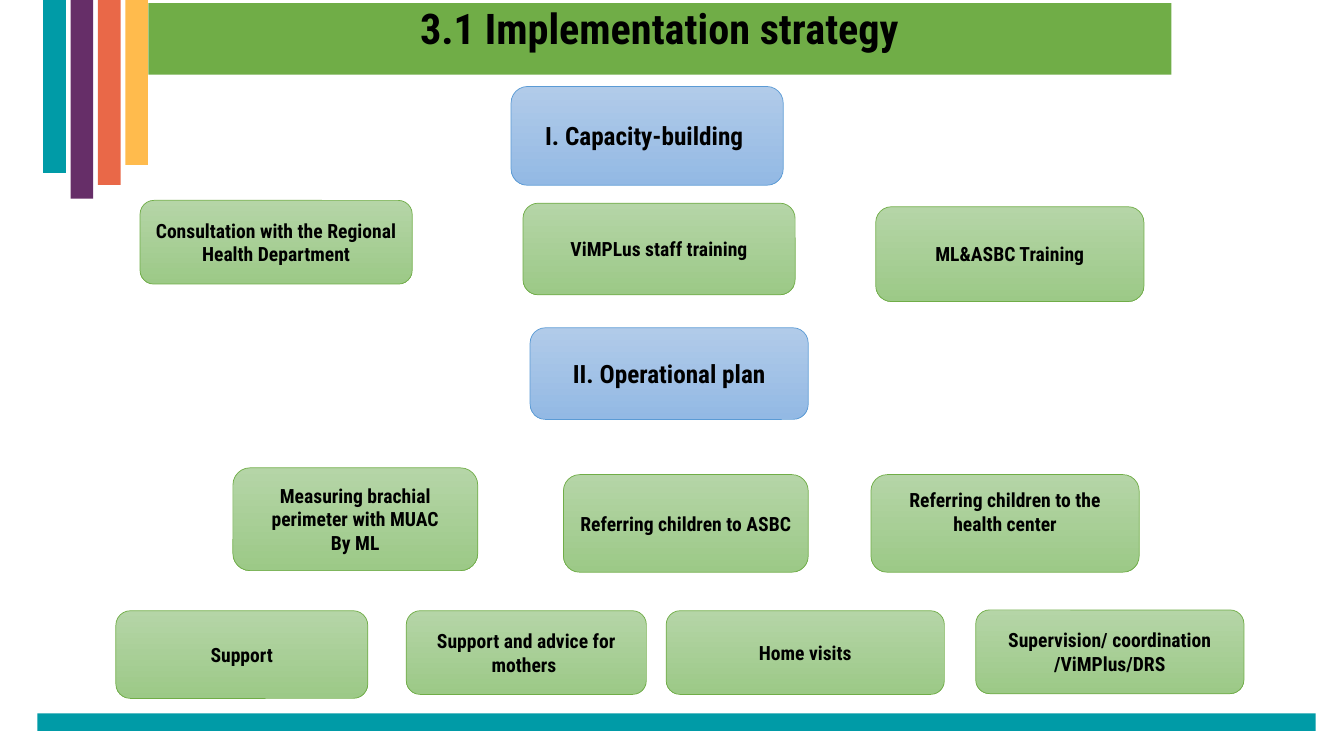
from dataclasses import dataclass

from pptx import Presentation
from pptx.dml.color import RGBColor
from pptx.enum.shapes import MSO_SHAPE
from pptx.enum.text import MSO_ANCHOR, PP_ALIGN
from pptx.util import Cm, Pt

RECT = MSO_SHAPE.RECTANGLE
ROUND = MSO_SHAPE.ROUNDED_RECTANGLE
TOP, MIDDLE = MSO_ANCHOR.TOP, MSO_ANCHOR.MIDDLE
CENTER = PP_ALIGN.CENTER


@dataclass(frozen=True)
class Theme:
    font: str = "Roboto Condensed"
    ink: str = "000000"
    teal: str = "009BA7"
    band: str = "70AD47"
    stripes: tuple = ("009BA7", "662E68", "E96848", "FFBB4D")
    blue: tuple = ("B1CBE9", "93B9E4", "5B9BD5")
    green: tuple = ("B5D5A7", "9CC987", "70AD47")
    title: float = 30.2
    head: float = 18
    step: float = 14


THEME = Theme()


def color(code):
    return RGBColor.from_string(code)


def write(frame, text, size, anchor):
    frame.text = text
    frame.word_wrap = True
    frame.vertical_anchor = anchor
    for para in frame.paragraphs:
        para.alignment = CENTER
        for run in para.runs:
            font = run.font
            font.name, font.size, font.bold = THEME.font, Pt(size), True
            font.color.rgb = color(THEME.ink)


def add_shape(slide, kind, box):
    shape = slide.shapes.add_shape(kind, *map(Cm, box))
    shape.shadow.inherit = False
    return shape


def add_bar(slide, box, fill):
    bar = add_shape(slide, RECT, box)
    bar.fill.solid()
    bar.fill.fore_color.rgb = color(fill)
    bar.line.fill.background()


def add_stripes(slide, box):
    left, top, width, height = box
    pitch = width / len(THEME.stripes)
    parts = (0.87, 1, 0.93, 0.83)
    for i, (fill, part) in enumerate(zip(THEME.stripes, parts)):
        add_bar(slide, (left + i * pitch, top, 0.57, height * part), fill)


def add_title(slide, box, text):
    title = slide.shapes.title
    title.left, title.top, title.width, title.height = map(Cm, box)
    title.fill.solid()
    title.fill.fore_color.rgb = color(THEME.band)
    write(title.text_frame, text, THEME.title, TOP)
    title.text_frame.paragraphs[0].line_spacing = 0.9


def add_card(slide, box, text, size, tones, lift=0):
    card = add_shape(slide, ROUND, box)
    start, end, edge = tones
    card.fill.gradient()
    card.fill.gradient_angle = 270
    for stop, tone, place in zip(card.fill.gradient_stops, (start, end), (0, 1)):
        stop.color.rgb = color(tone)
        stop.position = place
    card.line.color.rgb = color(edge)
    card.line.width = Pt(0.5)
    write(card.text_frame, text, size, MIDDLE)
    card.text_frame.margin_bottom = Cm(0.13 + lift)


def add_phase(slide, origin, head, steps):
    left, top = origin

    def put(size, tones, text, x, y, width, height, lift=0):
        box = (left + x, top + y, width, height)
        add_card(slide, box, text, size, tones, lift)

    put(THEME.head, THEME.blue, *head)
    for step in steps:
        put(THEME.step, THEME.green, *step)


def main():
    deck = Presentation()
    deck.slide_width, deck.slide_height = Cm(33.87), Cm(19.05)
    slide = deck.slides.add_slide(deck.slide_layouts[5])
    add_bar(slide, (0.94, 17.98, 32.22, 0.44), THEME.teal)
    add_stripes(slide, (1.09, 0, 2.76, 5.01))
    add_title(slide, (3.74, 0.08, 25.78, 1.8), "3.1 Implementation strategy")
    add_phase(
        slide,
        (3.53, 2.18),
        ("I. Capacity-building ", 9.35, 0, 6.86, 2.49),
        [
            ("Consultation with the Regional Health Department", 0, 2.87, 6.86, 2.11),
            ("ViMPLus staff training", 9.65, 2.94, 6.86, 2.31),
            ("ML&ASBC Training", 18.54, 3.03, 6.76, 2.39),
        ],
    )
    add_phase(
        slide,
        (2.92, 8.26),
        ("II. Operational plan", 10.44, 0, 7.01, 2.31),
        [
            ("Measuring brachial perimeter with MUAC\nBy ML", 2.95, 3.53, 6.17, 2.59),
            ("Referring children to ASBC", 11.28, 3.7, 6.17, 2.46),
            ("Referring children to the health center", 19.03, 3.7, 6.76, 2.46, 0.59),
            ("Support", 0, 7.13, 6.35, 2.21),
            ("Support and advice for mothers ", 7.32, 7.13, 6.05, 2.11),
            ("Home visits", 13.87, 7.13, 7.01, 2.11),
            ("Supervision/ coordination /ViMPlus/DRS", 21.67, 7.11, 6.76, 2.11),
        ],
    )
    deck.save("out.pptx")


if __name__ == "__main__":
    main()
